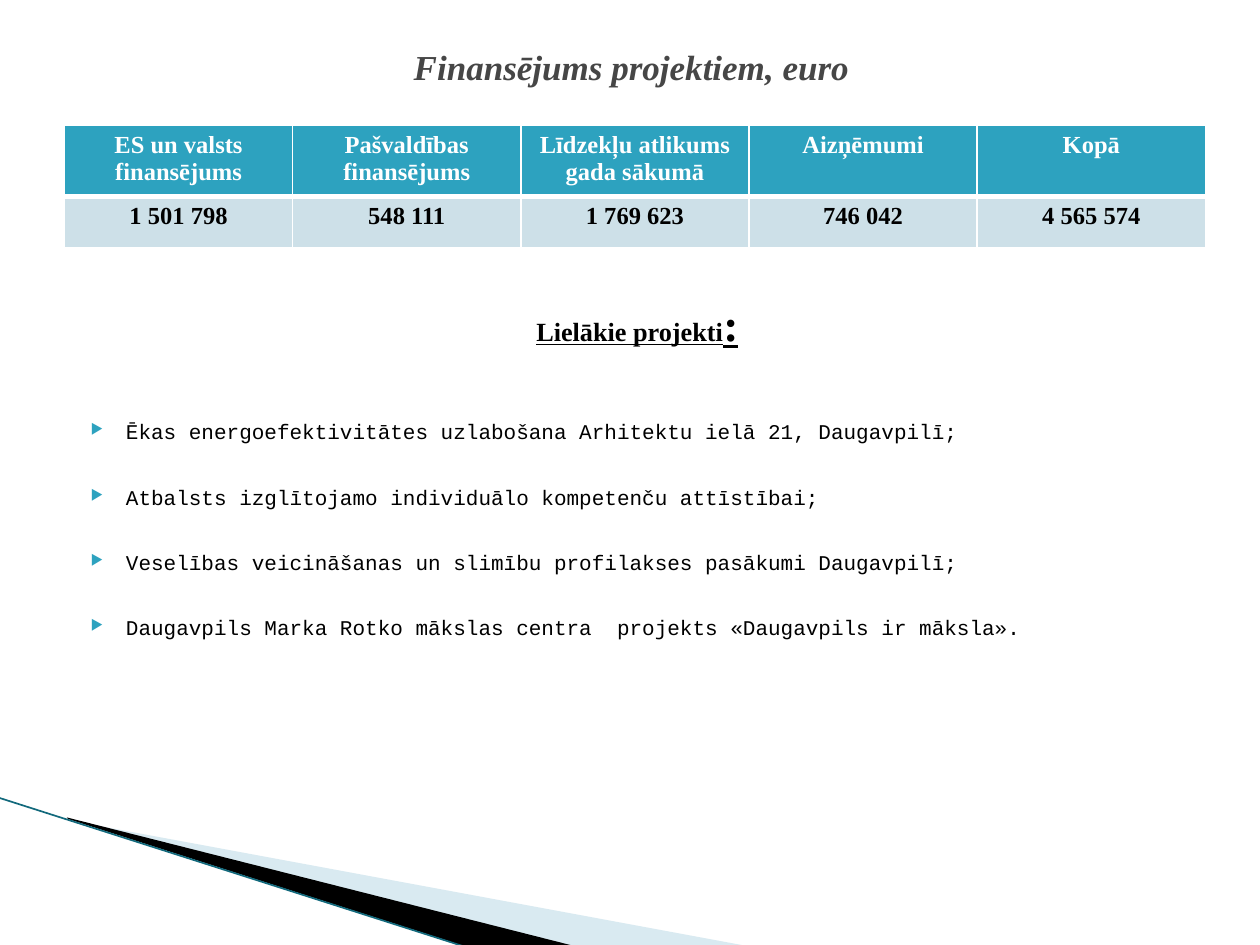
from lxml import etree
from pptx import Presentation
from pptx import util as u
from pptx.dml.color import RGBColor
from pptx.enum import shapes, text
from pptx.oxml import ns

SERIF, MONO = "Times New Roman", "Courier New"
TEAL, PALE, WHITE, BLACK = "2DA2BF", "CDE0E8", "FFFFFF", "000000"
CENTER = text.PP_ALIGN.CENTER


def color(code):
    return RGBColor.from_string(code)


def add_xml(parent, tag, **attributes):
    return etree.SubElement(parent, ns.qn(tag), attributes)


def write(para, words, font=SERIF, size=14, ink=BLACK, bold=False,
          italic=False, underline=False, align=None):
    """Append one formatted span to a paragraph."""
    span = para.add_run()
    span.text = words
    span.font.name, span.font.size = font, u.Pt(size)
    span.font.color.rgb = color(ink)
    span.font.bold, span.font.italic = bold, italic
    span.font.underline = underline
    if align is not None:
        para.alignment = align


class Page:
    """Current slide together with its style."""

    def __init__(self, deck):
        self.slide = deck.slides.add_slide(deck.slide_layouts[6])
        self.shapes = self.slide.shapes

    def wedge(self, points, fill, opacity=100):
        corners = [(u.Cm(x), u.Cm(y)) for x, y in points]
        builder = self.shapes.build_freeform(*corners[0])
        builder.add_line_segments(corners[1:], close=True)
        shape = builder.convert_to_shape()
        shape.shadow.inherit = False
        shape.fill.solid()
        shape.fill.fore_color.rgb = color(fill)
        shape.line.fill.background()
        if opacity < 100:
            tint = shape.fill._xPr.find(".//" + ns.qn("a:srgbClr"))
            add_xml(tint, "a:alpha", val=str(opacity * 1000))

    def line(self, start, end, ink, width):
        ends = [u.Cm(value) for value in start + end]
        connector = self.shapes.add_connector(shapes.MSO_CONNECTOR.STRAIGHT, *ends)
        connector.line.color.rgb = color(ink)
        connector.line.width = u.Pt(width)
        add_xml(connector._element.spPr, "a:effectLst")

    def box(self, left, top, width, height):
        frame = self.shapes.add_textbox(*map(u.Cm, (left, top, width, height))).text_frame
        frame.word_wrap = True
        return frame

    def bullet(self, frame, words, gap):
        para = frame.add_paragraph()
        props = para._p.get_or_add_pPr()
        props.set("marL", str(u.Cm(1.02)))
        props.set("indent", str(u.Cm(-0.71)))
        add_xml(add_xml(props, "a:buClr"), "a:srgbClr", val=TEAL)
        add_xml(props, "a:buSzPct", val="68000")
        add_xml(props, "a:buChar", char="▶")
        para.space_before = u.Pt(gap)
        write(para, words, font=MONO, size=12)

    def border(self, cell, **widths):
        """Draw white edges; each keyword is an edge tag and its width in points."""
        props = cell._tc.get_or_add_tcPr()
        for place, (edge, width) in enumerate(widths.items()):
            line = etree.Element(ns.qn("a:" + edge), w=str(u.Pt(width)))
            add_xml(add_xml(line, "a:solidFill"), "a:srgbClr", val=WHITE)
            props.insert(place, line)

    def table(self, left, top, width, heights, rows):
        table = self.shapes.add_table(len(rows), len(rows[0]), u.Cm(left), u.Cm(top),
                                      u.Cm(width), u.Cm(sum(heights))).table
        for r, (height, words) in enumerate(zip(heights, rows)):
            table.rows[r].height = u.Cm(height)
            fill, ink = (PALE, BLACK) if r else (TEAL, WHITE)
            for c, entry in enumerate(words):
                cell = table.cell(r, c)
                cell.fill.solid()
                cell.fill.fore_color.rgb = color(fill)
                write(cell.text_frame.paragraphs[0], entry, ink=ink, bold=True, align=CENTER)
                self.border(cell, lnL=1, lnR=1, lnT=3 if r else 1, lnB=1 if r else 3)


def main():
    deck = Presentation()
    deck.slide_width, deck.slide_height = u.Cm(25.4), u.Cm(19.05)
    page = Page(deck)

    page.wedge([(1.4, 16.54), (15.11, 19.08), (11.58, 19.08), (1.4, 16.51)], "A0CBDC", 40)
    page.wedge([(1.35, 16.48), (11.61, 19.08), (9.45, 19.1), (1.37, 16.51)], BLACK)
    page.line((-0.03, 16.08), (9.42, 19.1), "12697C", 0.95)

    projects = page.box(1.27, 5.84, 22.86, 10.85)
    heading = projects.paragraphs[0]
    heading._p.get_or_add_pPr().set("marL", str(u.Cm(0.3)))
    for words, size in (("Lielākie projekti", 15), (":", 26)):
        write(heading, words, size=size, bold=True, underline=True, align=CENTER)
    names = [
        "Ēkas energoefektivitātes uzlabošana Arhitektu ielā 21, Daugavpilī;",
        "Atbalsts izglītojamo individuālo kompetenču attīstībai;",
        "Veselības veicināšanas un slimību profilakses pasākumi Daugavpilī;",
        "Daugavpils Marka Rotko mākslas centra  projekts «Daugavpils ir māksla».",
    ]
    for number, name in enumerate(names):
        page.bullet(projects, name, gap=23 if number else 39)

    title = page.box(1.3, 0.8, 22.86, 4.8)
    write(title.paragraphs[0], "Finansējums projektiem, euro", size=20, ink="464646",
          bold=True, italic=True, align=CENTER)

    page.table(1.3, 2.52, 23, (1.35, 1.03), [
        ["ES un valsts finansējums", "Pašvaldības finansējums",
         "Līdzekļu atlikums gada sākumā", "Aizņēmumi", "Kopā"],
        ["1 501 798", "548 111", "1 769 623", "746 042", "4 565 574"],
    ])
    deck.save("out.pptx")


if __name__ == "__main__":
    main()
